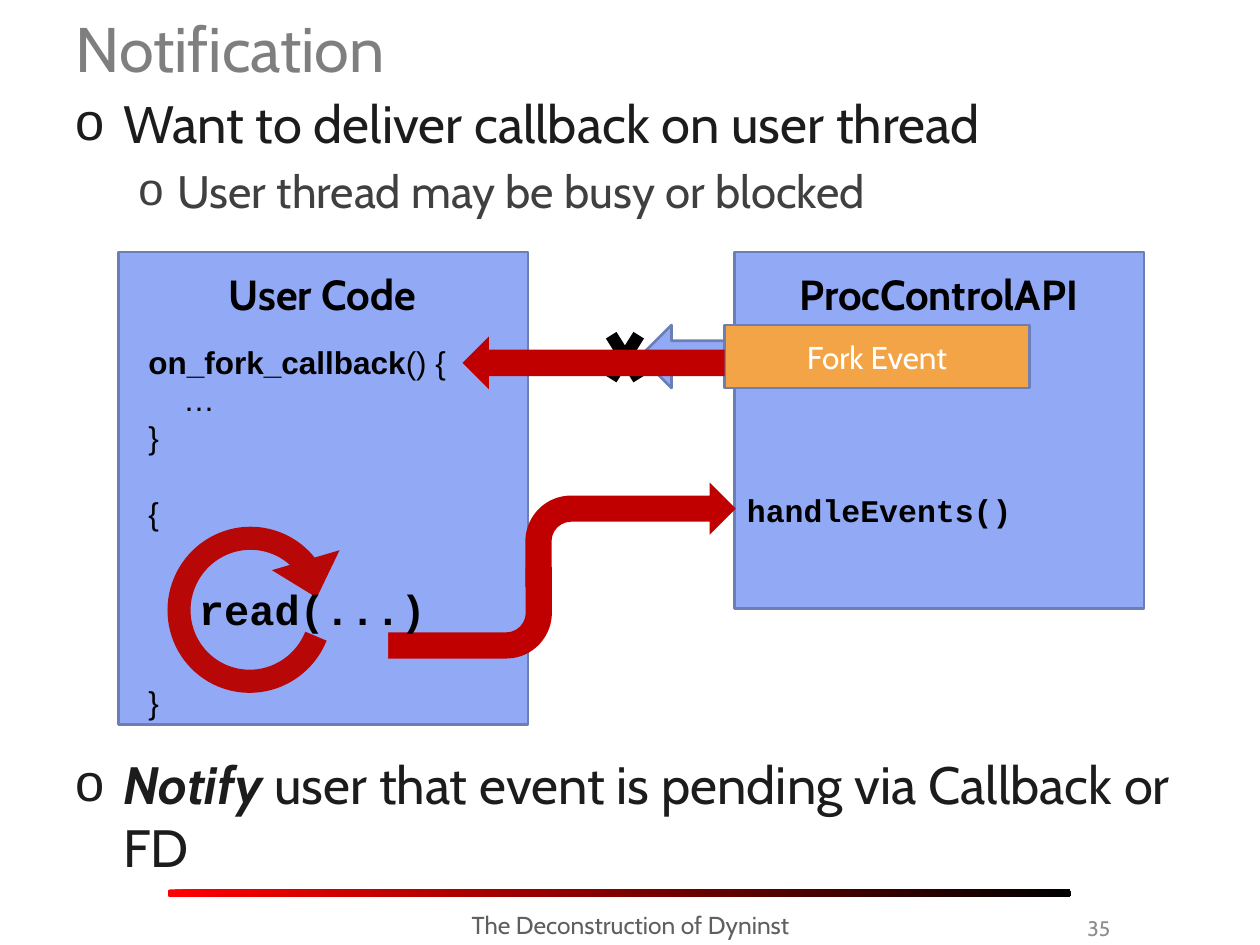
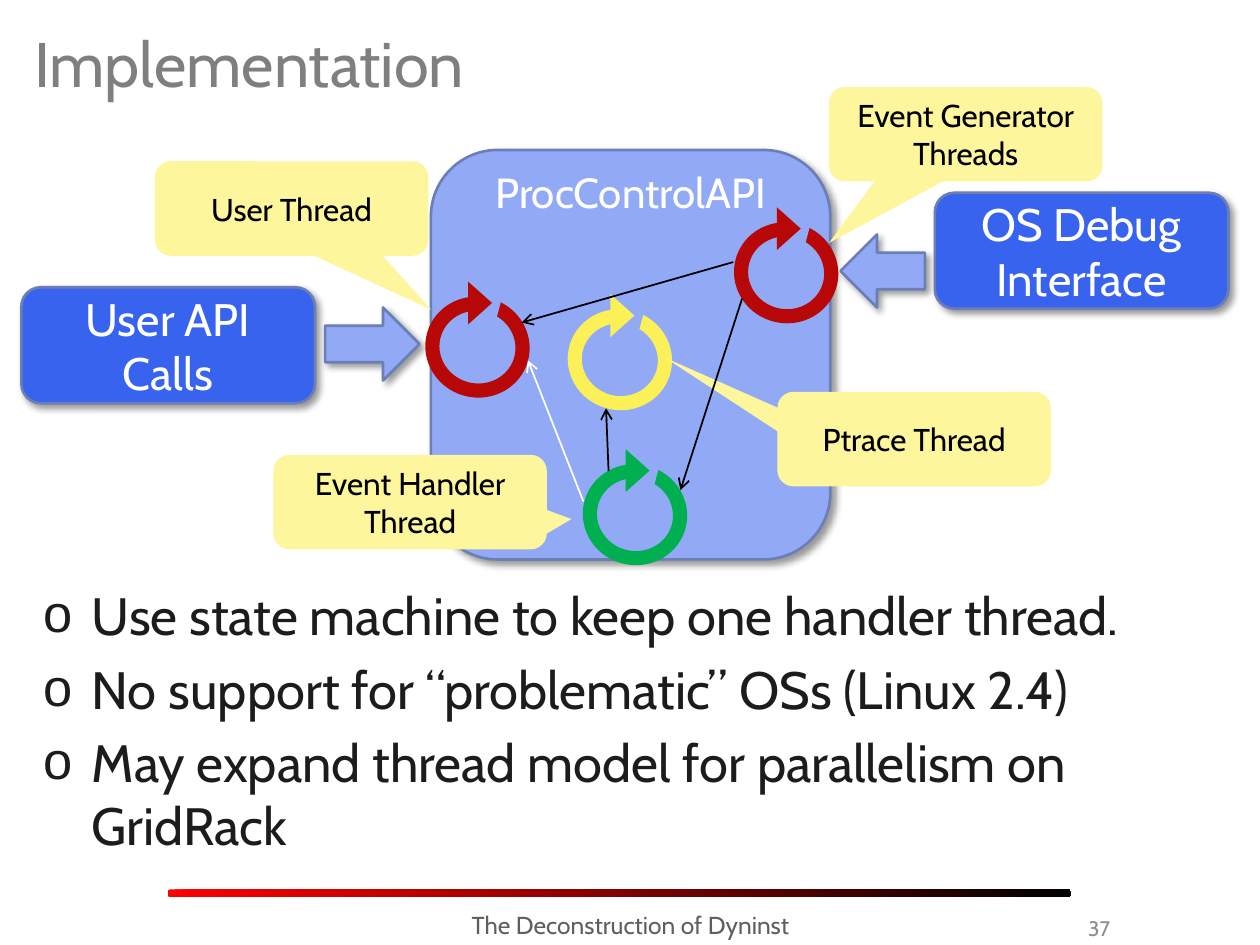
from dataclasses import dataclass

from lxml import etree
from pptx import Presentation
from pptx.dml.color import RGBColor
from pptx.enum import shapes, text
from pptx.oxml import ns
from pptx.util import Inches, Pt

SHAPE = shapes.MSO_SHAPE
ALIGN = text.PP_ALIGN
ANCHOR = text.MSO_ANCHOR


@dataclass(frozen=True)
class Theme:
    body_font: str = "Cabin"
    code_font: str = "Courier New"
    plain_font: str = "Arial"
    title: str = "7F7F7F"
    body: str = "1C1C1C"
    sub_body: str = "404040"
    footer: str = "5F5F5F"
    number: str = "8C8C8C"
    black: str = "000000"
    white: str = "FFFFFF"
    panel: str = "92AAF6"
    edge: str = "6C7EB6"
    caller: str = "3763EF"
    event: str = "F3A447"
    note: str = "FDF69C"
    flow: str = "C00000"
    loop: str = "B70707"
    ptrace: str = "FCF059"
    handler: str = "00B050"
    bar_start: str = "FF0000"
    title_size: int = 36
    body_size: int = 30
    sub_size: int = 26
    heading_size: int = 24
    label_size: int = 18
    footer_size: int = 14
    number_size: int = 12


THEME = Theme()


@dataclass(frozen=True)
class Box:
    left: float
    top: float
    width: float
    height: float

    def within(self, left, top, width, height):
        return Box(self.left + left, self.top + top, width, height)

    def lengths(self):
        return [Inches(n) for n in (self.left, self.top, self.width, self.height)]


@dataclass(frozen=True)
class Ring:
    """Proportions of a circular arrow: a donut, a cover for its gap, a head."""
    size: tuple
    turn: float
    cover: tuple
    head: tuple
    head_turn: float


BIG_RING = Ring((1.31, 1.32), 22.8, (1, 0.38, 0.56, 0.51), (0.86, 0.26, 0.56, 0.31), 163.6)
SMALL_RING = Ring((0.8, 0.83), 285, (0.31, -0.01, 0.34, 0.19), (0.25, -0.03, 0.34, 0.19), 90)


# ---- Basic parts ----

def set_font(font, size, color, name=THEME.body_font, bold=False):
    font.name, font.size, font.bold = name, Pt(size), bold
    font.color.rgb = RGBColor.from_string(color)


def write(shape, words, size, color, name=THEME.body_font, bold=False,
          align=ALIGN.LEFT, anchor=ANCHOR.TOP):
    frame = shape.text_frame
    frame.word_wrap, frame.vertical_anchor = True, anchor
    para = frame.paragraphs[0]
    para.text, para.alignment = words, align
    set_font(para.font, size, color, name, bold)


def add_text(page, box, words, size, color, **style):
    shape = page.shapes.add_textbox(*box.lengths())
    write(shape, words, size, color, **style)


def add_effects(shape, shadow):
    """Give the shape a soft lower-right shadow, or none."""
    shape.shadow.inherit = False
    if shadow:
        effects = shape._element.spPr.find(ns.qn("a:effectLst"))
        outer = etree.SubElement(effects, ns.qn("a:outerShdw"), blurRad=str(Pt(4)),
                                 dist=str(Pt(3)), dir="2700000", algn="tl", rotWithShape="0")
        color = etree.SubElement(outer, ns.qn("a:srgbClr"), val=THEME.black)
        etree.SubElement(color, ns.qn("a:alpha"), val="40000")


def add_shape(page, kind, box, fill, edge=False, shadow=False, turn=0, adjust=()):
    shape = page.shapes.add_shape(kind, *box.lengths())
    shape.rotation = turn
    for index, value in enumerate(adjust):
        shape.adjustments[index] = value
    shape.fill.solid()
    shape.fill.fore_color.rgb = RGBColor.from_string(fill)
    if edge:
        shape.line.color.rgb = RGBColor.from_string(THEME.edge)
        shape.line.width = Pt(1.5)
    else:
        shape.line.fill.background()
    add_effects(shape, shadow)
    return shape


def add_label(page, kind, box, words, fill, size, color, **style):
    shape = add_shape(page, kind, box, fill, **style)
    write(shape, words, size, color, align=ALIGN.CENTER, anchor=ANCHOR.MIDDLE)


def add_ring(page, left, top, color, ring):
    box = Box(left, top, *ring.size)
    add_shape(page, SHAPE.DONUT, box, color, turn=ring.turn, adjust=[0.14])
    add_shape(page, SHAPE.RECTANGLE, box.within(*ring.cover), THEME.panel, turn=ring.turn)
    add_shape(page, SHAPE.ISOSCELES_TRIANGLE, box.within(*ring.head), color,
              turn=ring.head_turn)


def add_arrow(page, start, end, color):
    line = page.shapes.add_connector(shapes.MSO_CONNECTOR.STRAIGHT,
                                     *[Inches(n) for n in (*start, *end)])
    line.line.color.rgb = RGBColor.from_string(color)
    line.line.width = Pt(1)
    etree.SubElement(line.line._get_or_add_ln(), ns.qn("a:tailEnd"), type="arrow")
    etree.SubElement(line._element.spPr, ns.qn("a:effectLst"))


def add_bullets(page, box, items):
    """Each item is a level and its spans; a span is words and an emphasis flag."""
    levels = [(0.38, 0.38, THEME.body_size, THEME.body),
              (0.81, 0.31, THEME.sub_size, THEME.sub_body)]
    frame = page.shapes.add_textbox(*box.lengths()).text_frame
    frame.word_wrap = True
    for index, (level, spans) in enumerate(items):
        para = frame.add_paragraph() if index else frame.paragraphs[0]
        margin, hang, size, color = levels[level]
        if index:
            para.space_before = Pt(size * 0.2)
        props = para._p.get_or_add_pPr()
        props.set("marL", str(Inches(margin)))
        props.set("indent", str(-Inches(hang)))
        etree.SubElement(props, ns.qn("a:buFont"), typeface=THEME.plain_font)
        etree.SubElement(props, ns.qn("a:buChar"), char="o")
        para.level = level
        set_font(para.font, size, color)
        for words, emphasis in spans:
            span = para.add_run()
            span.text = words
            if emphasis:
                span.font.bold = span.font.italic = True


# ---- Shared page frame ----

def add_page(deck, title, title_box, number):
    page = deck.slides.add_slide(deck.slide_layouts[5])
    heading = page.shapes.title
    heading.left, heading.top, heading.width, heading.height = title_box.lengths()
    write(heading, title, THEME.title_size, THEME.title, anchor=ANCHOR.MIDDLE)
    add_footer(page, Box(1.33, 7.06, 7.58, 0.5), number)
    return page


def add_footer(page, box, number):
    bar = add_shape(page, SHAPE.ROUNDED_RECTANGLE, box.within(0, 0, 7.17, 0.06),
                    THEME.black, adjust=[0.33])
    bar.fill.gradient()
    bar.fill.gradient_angle = 0
    for stop, color in zip(bar.fill.gradient_stops, (THEME.bar_start, THEME.black)):
        stop.color.rgb = RGBColor.from_string(color)
    add_text(page, box.within(1.09, 0.11, 5.17, 0.4), "The Deconstruction of Dyninst",
             THEME.footer_size, THEME.footer, align=ALIGN.CENTER)
    add_text(page, box.within(6.25, 0.11, 1.33, 0.4), str(number), THEME.number_size,
             THEME.number, align=ALIGN.RIGHT, anchor=ANCHOR.MIDDLE)


# ---- Notification ----

def add_panel(page, box, heading):
    add_shape(page, SHAPE.RECTANGLE, box, THEME.panel, edge=True)
    add_text(page, box.within(0.08, 0.08, 3.08, 0.5), heading, THEME.heading_size,
             THEME.black, bold=True, align=ALIGN.CENTER)


def add_user_code(page, box):
    add_panel(page, box, "User Code")
    add_ring(page, box.left + 0.39, box.top + 2.18, THEME.loop, BIG_RING)
    frame = page.shapes.add_textbox(*box.within(0.14, 0.67, 2.67, 3.13).lengths()).text_frame
    frame.word_wrap = True
    pitch = 21.6
    # Lines of code with the number of empty lines above each
    code = [("() {", 0), ("    …", 0), ("}", 0), ("{", 1), ("}", 4)]
    for index, (words, gap) in enumerate(code):
        para = frame.add_paragraph() if index else frame.paragraphs[0]
        para.line_spacing = Pt(pitch)
        if gap:
            para.space_before = Pt(gap * pitch)
        set_font(para.font, THEME.label_size, THEME.black, THEME.plain_font)
        if index == 0:
            name = para.add_run()
            name.text, name.font.bold = "on_fork_callback", True
        para.add_run().text = words


def add_fork_event(page, box):
    add_label(page, SHAPE.RECTANGLE, box.within(2.08, 0.08, 2.42, 0.5), "Fork Event",
              THEME.event, THEME.label_size, THEME.white, edge=True)
    add_shape(page, SHAPE.LEFT_ARROW, box.within(1.41, 0.08, 0.67, 0.5), THEME.panel, edge=True)
    add_shape(page, SHAPE.MATH_MULTIPLY, box.within(1.08, 0, 0.42, 0.67), THEME.black)
    add_shape(page, SHAPE.RIGHT_ARROW, box.within(0, 0.17, 2.08, 0.42), THEME.flow, turn=180)


def add_read_flow(page, box):
    # Two bent arrows make an S; the cover hides the lower head
    add_shape(page, SHAPE.BENT_ARROW, box.within(2.69, 0, 1.67, 0.83), THEME.flow)
    add_shape(page, SHAPE.BENT_ARROW, box.within(1.23, 0.67, 1.67, 0.83), THEME.flow, turn=180)
    add_shape(page, SHAPE.RECTANGLE, box.within(1.18, 1.01, 0.42, 0.5), THEME.panel)
    code = dict(name=THEME.code_font, bold=True)
    add_text(page, box.within(0, 0.75, 2.41, 0.5), "read(...)", THEME.heading_size,
             THEME.black, **code)
    add_text(page, box.within(4.35, 0.02, 2.67, 0.4), "handleEvents()", THEME.label_size,
             THEME.black, **code)


def build_notification(deck):
    page = add_page(deck, "Notification", Box(0.5, -0.25, 9, 1.25), 35)
    add_bullets(page, Box(0.5, 0.67, 9.5, 1.17), [
        (0, [("Want to deliver callback on user thread", False)]),
        (1, [("User thread may be busy or blocked", False)])])
    add_user_code(page, Box(0.94, 2, 3.25, 3.75))
    add_panel(page, Box(5.83, 2, 3.25, 2.83), "ProcControlAPI")
    add_fork_event(page, Box(3.67, 2.5, 4.5, 0.67))
    add_read_flow(page, Box(1.48, 3.83, 7.02, 1.5))
    add_bullets(page, Box(0.5, 5.92, 9.5, 0.75), [
        (0, [("Notify", True), (" user that event is pending via Callback or FD", False)])])


# ---- Implementation ----

def add_thread_model(page, box):
    add_shape(page, SHAPE.ROUNDED_RECTANGLE, box.within(3.25, 0.5, 3.17, 3.25), THEME.panel,
              edge=True, shadow=True)
    add_text(page, box.within(3.25, 0.58, 3.17, 0.51), "ProcControlAPI", THEME.heading_size,
             THEME.white, align=ALIGN.CENTER)
    # Callers outside the library
    for left, top, words in [(0, 1.59, "User API Calls"), (7.25, 0.84, "OS Debug Interface")]:
        add_label(page, SHAPE.ROUNDED_RECTANGLE, box.within(left, top, 2.33, 0.92), words,
                  THEME.caller, THEME.sub_size, THEME.white, edge=True, shadow=True)
    for left, top, width, turn in [(2.41, 1.75, 0.75, 0), (6.5, 1.17, 0.67, 180)]:
        add_shape(page, SHAPE.RIGHT_ARROW, box.within(left, top, width, 0.58), THEME.panel,
                  edge=True, shadow=True, turn=turn)
    # Threads
    for left, top, color in [(3.22, 1.65, THEME.loop), (5.67, 1.06, THEME.loop),
                             (4.47, 2.98, THEME.handler), (4.35, 1.75, THEME.ptrace)]:
        add_ring(page, box.left + left, box.top + top, color, SMALL_RING)
    # Names of the threads, with the tip of each callout
    for left, top, words, tip in [
            (6.41, 0, "Event Generator Threads", (-0.5, 1.15)),
            (1.06, 0.59, "User Thread", (0.51, 1.07)),
            (2, 2.92, "Event Handler Thread", (0.59, 0.18)),
            (6, 2.42, "Ptrace Thread", (-0.91, -0.86))]:
        add_label(page, SHAPE.ROUNDED_RECTANGULAR_CALLOUT, box.within(left, top, 2.17, 0.75),
                  words, THEME.note, THEME.label_size, THEME.black, adjust=[*tip, 0.17])
    # Messages between threads
    for start, end, color in [((5.72, 1.68), (5.23, 3.2), THEME.black),
                              ((4.66, 3.05), (4.64, 2.55), THEME.black),
                              ((5.65, 1.39), (3.97, 1.87), THEME.black),
                              ((4.46, 3.29), (4.02, 2.17), THEME.white)]:
        points = [(box.left + x, box.top + y) for x, y in (start, end)]
        add_arrow(page, *points, color)


def build_implementation(deck):
    page = add_page(deck, "Implementation", Box(0.17, 0.08, 9.67, 0.83), 37)
    add_thread_model(page, Box(0.17, 0.69, 9.58, 3.81))
    lines = ["Use state machine to keep one handler thread.",
             "No support for “problematic” OSs (Linux 2.4)",
             "May expand thread model for parallelism on GridRack"]
    add_bullets(page, Box(0.25, 4.58, 9.58, 2.58), [(0, [(line, False)]) for line in lines])


def main():
    deck = Presentation()
    deck.slide_width, deck.slide_height = Inches(10), Inches(7.5)
    build_notification(deck)
    build_implementation(deck)
    deck.save("out.pptx")


if __name__ == "__main__":
    main()
